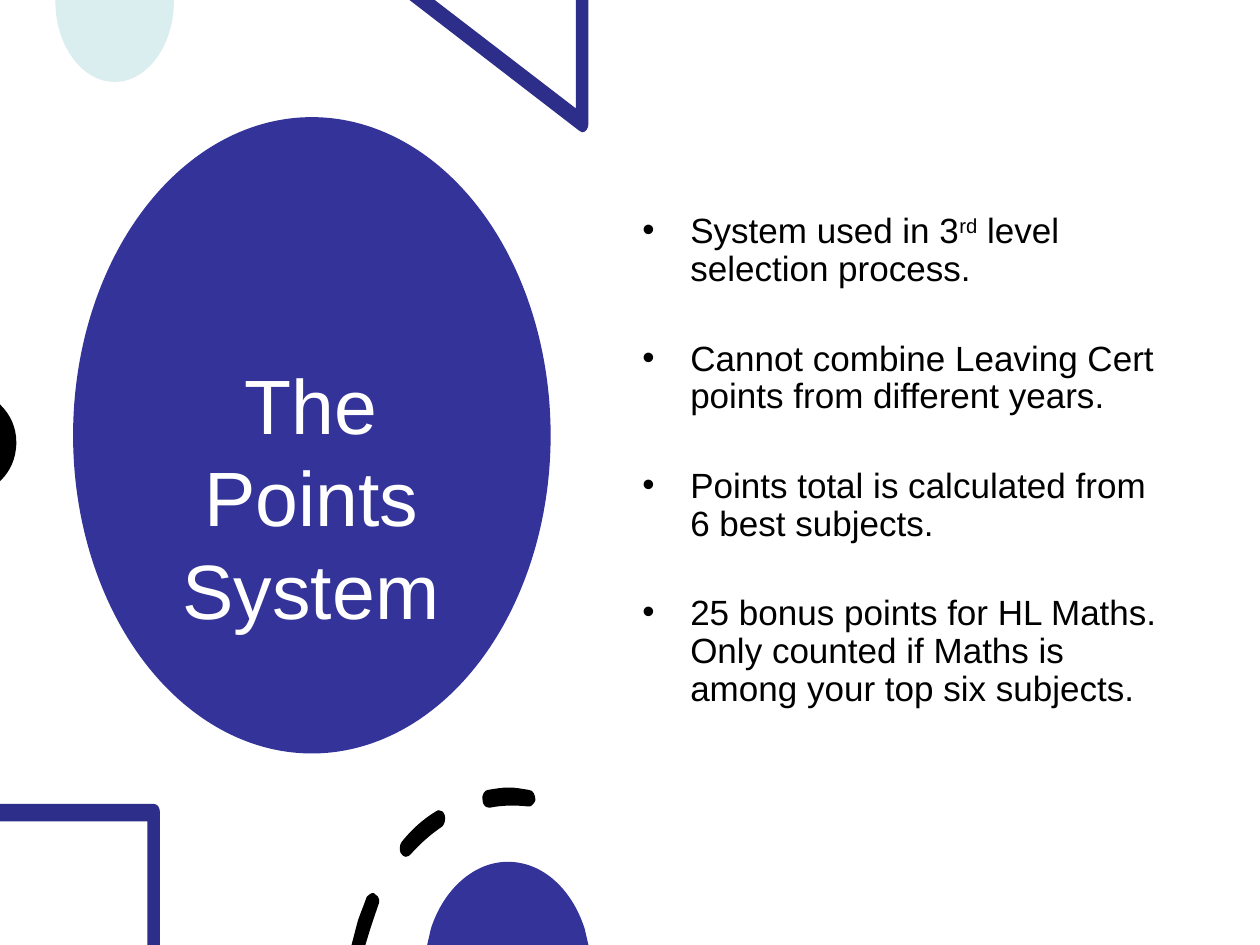
"""Build the slide about the points system."""
from lxml import etree
from pptx import Presentation
from pptx.dml.color import RGBColor
from pptx.enum.shapes import MSO_SHAPE
from pptx.enum.text import MSO_ANCHOR, PP_ALIGN
from pptx.oxml.ns import qn
from pptx.util import Inches, Pt

ELLIPSE = MSO_SHAPE.OVAL
TOP, MIDDLE = MSO_ANCHOR.TOP, MSO_ANCHOR.MIDDLE
LEFT, CENTER = PP_ALIGN.LEFT, PP_ALIGN.CENTER
INDIGO = RGBColor(0x33, 0x33, 0x99)
NAVY = RGBColor(0x2D, 0x2D, 0x8A)
PALE_TEAL = RGBColor(0xDA, 0xED, 0xEF)
BLACK = RGBColor(0, 0, 0)
WHITE = RGBColor(255, 255, 255)
FONT = "Arial"

TITLE = "The Points System"
BULLETS = [
    [("System used in 3", False), ("rd", True), (" level selection process.", False)],
    [("Cannot combine Leaving Cert points from different years.", False)],
    [("Points total is calculated from 6 best subjects.", False)],
    [("25 bonus points for HL Maths. Only counted if Maths is among your top six subjects.", False)],
]

# Each contour lists points (x, y) and curves (x1, y1, x2, y2, x, y) in inches.
TEAL_DISC = [[(1.38, 0), (0.44, 0), (0.44, 0.01), (0.44, 0.36, 0.65, 0.65, 0.91, 0.65),
              (1.17, 0.65, 1.38, 0.36, 1.38, 0.01)]]
TRIANGLE = [[(4.67, 0), (4.57, 0), (4.57, 0.86), (3.45, 0), (3.25, 0), (4.6, 1.04),
             (4.61, 1.05, 4.61, 1.05, 4.62, 1.05), (4.65, 1.05, 4.67, 1.02, 4.67, 0.98)]]
EDGE_DISC = [[(0, 3.21), (0, 3.82), (0.01, 3.81), (0.08, 3.74, 0.13, 3.64, 0.13, 3.51),
              (0.13, 3.39, 0.08, 3.29, 0.01, 3.22)]]
CORNER_FRAME = [[(1.22, 6.38), (0, 6.38), (0, 6.52), (1.17, 6.52), (1.17, 7.5), (1.27, 7.5),
                 (1.27, 6.45), (1.27, 6.41, 1.25, 6.38, 1.22, 6.38)]]
DASHED_ARC = [
    [(2.97, 7.09), (2.95, 7.08, 2.93, 7.1, 2.91, 7.12), (2.89, 7.18, 2.86, 7.25, 2.84, 7.31),
     (2.79, 7.5), (2.9, 7.5), (2.94, 7.37), (2.96, 7.31, 2.98, 7.25, 3, 7.19),
     (3.02, 7.16, 3.01, 7.11, 2.98, 7.1), (2.98, 7.09, 2.97, 7.09, 2.97, 7.09)],
    [(3.48, 6.43), (3.47, 6.43, 3.47, 6.43, 3.46, 6.44), (3.36, 6.5, 3.27, 6.58, 3.19, 6.68),
     (3.17, 6.7, 3.17, 6.75, 3.18, 6.77), (3.19, 6.79, 3.21, 6.8, 3.22, 6.8), (3.22, 6.8),
     (3.24, 6.8, 3.25, 6.79, 3.26, 6.78), (3.33, 6.7, 3.42, 6.62, 3.51, 6.56),
     (3.53, 6.54, 3.54, 6.5, 3.53, 6.47), (3.52, 6.44, 3.5, 6.43, 3.48, 6.43)],
    [(4.04, 6.25), (3.98, 6.25, 3.93, 6.26, 3.87, 6.27), (3.85, 6.27, 3.82, 6.31, 3.83, 6.35),
     (3.83, 6.38, 3.85, 6.41, 3.88, 6.41), (3.88, 6.41, 3.88, 6.41, 3.89, 6.41),
     (3.99, 6.39, 4.09, 6.39, 4.19, 6.4), (4.21, 6.41, 4.24, 6.38, 4.25, 6.35),
     (4.25, 6.31, 4.23, 6.27, 4.2, 6.27), (4.2, 6.27, 4.2, 6.27, 4.2, 6.27),
     (4.14, 6.26, 4.09, 6.25, 4.04, 6.25)],
]
BOTTOM_DISC = [[(4.03, 6.84), (3.76, 6.84, 3.52, 7.06, 3.42, 7.37), (3.39, 7.5), (4.67, 7.5),
                (4.64, 7.37), (4.54, 7.06, 4.31, 6.84, 4.03, 6.84)]]
DECORATIONS = [(TEAL_DISC, PALE_TEAL), (TRIANGLE, NAVY), (EDGE_DISC, BLACK),
               (CORNER_FRAME, NAVY), (DASHED_ARC, BLACK), (BOTTOM_DISC, INDIGO)]


def paint(shape, color):
    shape.shadow.inherit = False
    shape.fill.solid()
    shape.fill.fore_color.rgb = color
    shape.line.fill.background()


def bend(line, segment, left, top):
    line.tag = qn("a:cubicBezTo")
    for child in list(line):
        line.remove(child)
    for x, y in zip(segment[::2], segment[1::2]):
        point = etree.SubElement(line, qn("a:pt"))
        point.set("x", str(Inches(x) - left))
        point.set("y", str(Inches(y) - top))


def add_outline(slide, contours, color):
    builder = slide.shapes.build_freeform(*map(Inches, contours[0][0]))
    for index, contour in enumerate(contours):
        if index:
            builder.move_to(*map(Inches, contour[0]))
        ends = [tuple(map(Inches, segment[-2:])) for segment in contour[1:]]
        builder.add_line_segments(ends, close=True)
    shape = builder.convert_to_shape()
    paint(shape, color)
    segments = [segment for contour in contours for segment in contour[1:]]
    lines = list(shape._element.iter(qn("a:lnTo")))
    for line, segment in zip(lines, segments):
        if len(segment) == 6:
            bend(line, segment, shape.left, shape.top)


def add_text_box(slide, box, anchor, top_inset):
    frame = slide.shapes.add_textbox(*map(Inches, box)).text_frame
    frame.word_wrap = True
    frame.vertical_anchor = anchor
    frame.margin_top = Inches(top_inset)
    return frame


def style(paragraph, size, color, alignment, line_spacing):
    paragraph.alignment = alignment
    paragraph.line_spacing = Pt(line_spacing)
    paragraph.font.name = FONT
    paragraph.font.size = Pt(size)
    paragraph.font.color.rgb = color


def add_run(paragraph, text, size, color, superscript=False):
    run = paragraph.add_run()
    run.text = text
    run.font.name = FONT
    run.font.size = Pt(size)
    run.font.color.rgb = color
    if superscript:
        run.font._element.set("baseline", "30000")


def add_bullet(paragraph):
    properties = paragraph._p.get_or_add_pPr()
    properties.set("marL", str(Inches(0.38)))
    properties.set("indent", str(-Inches(0.38)))
    etree.SubElement(properties, qn("a:buFont")).set("typeface", FONT)
    etree.SubElement(properties, qn("a:buChar")).set("char", "•")


def main():
    presentation = Presentation()
    presentation.slide_width, presentation.slide_height = Inches(10), Inches(7.5)
    slide = presentation.slides.add_slide(presentation.slide_layouts[6])

    title_disc = slide.shapes.add_shape(ELLIPSE, *map(Inches, (0.58, 0.93, 3.79, 5.05)))
    paint(title_disc, INDIGO)
    title = add_text_box(slide, (1.14, 1.35, 2.66, 4.45), MIDDLE, 0.77).paragraphs[0]
    style(title, 44, WHITE, CENTER, 52.8)
    add_run(title, TITLE, 44, WHITE)

    for contours, color in DECORATIONS:
        add_outline(slide, contours, color)

    body = add_text_box(slide, (5, 0.9, 4.31, 5.95), TOP, 0.79)
    for index, runs in enumerate(BULLETS):
        paragraph = body.add_paragraph() if index else body.paragraphs[0]
        add_bullet(paragraph)
        style(paragraph, 20, BLACK, LEFT, 21.6)
        if index:
            paragraph.space_before = Pt(29.5)
        for text, superscript in runs:
            add_run(paragraph, text, 20, BLACK, superscript)

    presentation.save("out.pptx")


if __name__ == "__main__":
    main()
